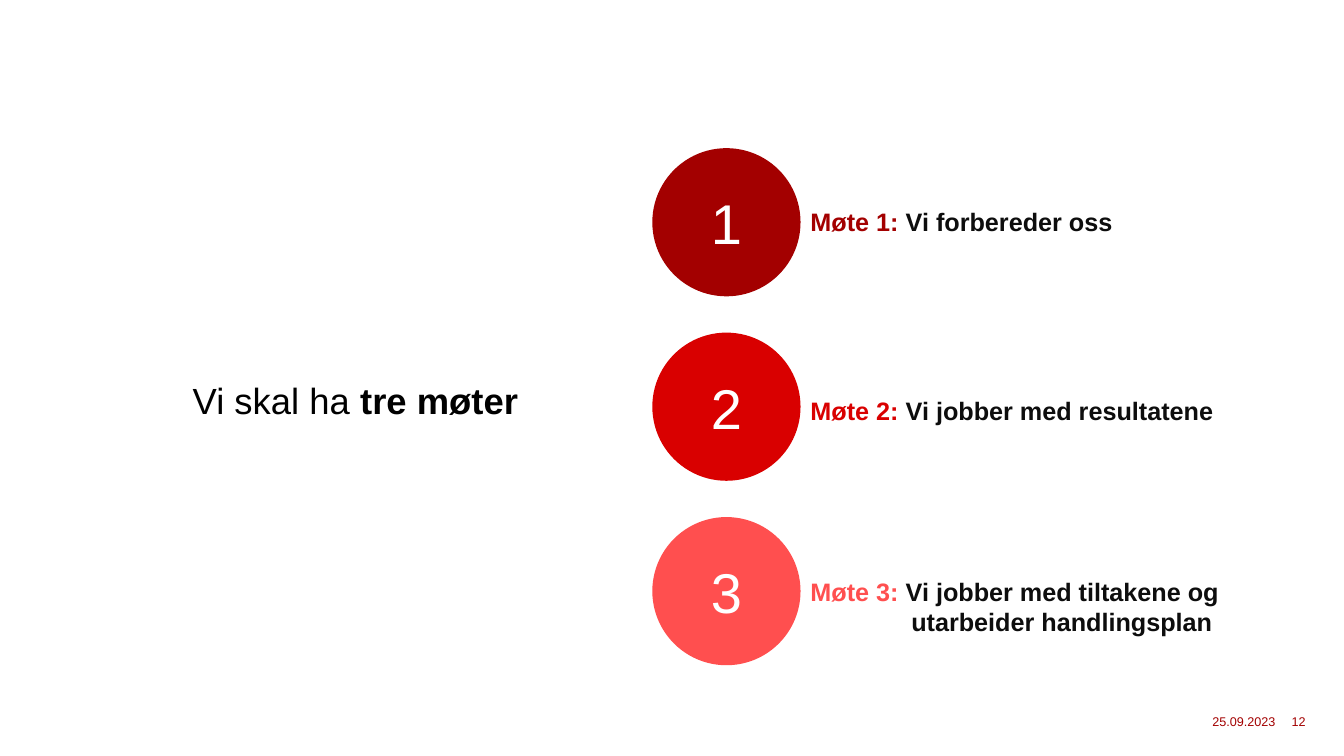
from pptx import Presentation, util as u
from pptx.dml.color import RGBColor
from pptx.enum import shapes, text

DARK, RED, PINK = "A30000", "D90000", "FF4F4F"
BLACK, INK, WHITE = "000000", "0D0D0D", "FFFFFF"

# Meeting grid: circles in one column, labels right beside them
LEFT, TOP, SIZE, STEP = 6.47, 1.47, 1.47, 1.83

# Number colour, label top, label width, label height, lines
MEETINGS = [
    (DARK, 2, 3.23, 0.4, ["Vi forbereder oss"]),
    (RED, 3.87, 4.24, 0.4, ["Vi jobber med resultatene"]),
    (PINK, 5.67, 5.24, 0.71,
     ["Vi jobber med tiltakene og", "utarbeider handlingsplan"]),
]


def color(code):
    return RGBColor.from_string(code)


def style(para, size, code=None, bold=None):
    font = para.font
    font.name, font.size, font.bold = "Arial", u.Pt(size), bold
    if code:
        font.color.rgb = color(code)


def add_run(para, words, code=None, bold=None):
    run = para.add_run()
    run.text = words
    run.font.bold = bold
    if code:
        run.font.color.rgb = color(code)


def add_box(slide, left, top, width, height, inset=True, wrap=True):
    box = slide.shapes.add_textbox(*map(u.Inches, (left, top, width, height)))
    frame = box.text_frame
    frame.word_wrap = wrap
    if not inset:
        frame.margin_left = frame.margin_right = 0
        frame.margin_top = frame.margin_bottom = 0
    return frame


def add_claim(slide):
    para = add_box(slide, 0.68, 3.75, 5.79, 2.88, inset=False).paragraphs[0]
    para.alignment = text.PP_ALIGN.CENTER
    para.space_after = u.Pt(3)
    style(para, 26, BLACK)
    add_run(para, "Vi skal ha ")
    add_run(para, "tre møter ", bold=True)


def add_circle(slide, number, top, code):
    disc = slide.shapes.add_shape(
        shapes.MSO_SHAPE.OVAL, *map(u.Inches, (LEFT, top, SIZE, SIZE)))
    disc.shadow.inherit = False
    disc.fill.solid()
    disc.fill.fore_color.rgb = color(code)
    disc.line.fill.background()
    frame = disc.text_frame
    frame.vertical_anchor = text.MSO_ANCHOR.MIDDLE
    para = frame.paragraphs[0]
    para.alignment = text.PP_ALIGN.CENTER
    para.text = str(number)
    style(para, 40, WHITE)


def add_label(slide, number, top, width, height, code, lines):
    frame = add_box(slide, LEFT + SIZE, top, width, height,
                    wrap=len(lines) > 1)
    frame.auto_size = text.MSO_AUTO_SIZE.SHAPE_TO_FIT_TEXT
    para = frame.paragraphs[0]
    style(para, 18, bold=True)
    add_run(para, f"Møte {number}: ", code, True)
    add_run(para, lines[0], INK, True)
    # Further lines sit indented below the first
    for line in lines[1:]:
        para = frame.add_paragraph()
        para.level = 2
        props = para._p.get_or_add_pPr()
        props.set("marL", str(u.Inches(1)))
        props.set("indent", "0")
        para.text = line
        style(para, 18, INK, True)


def add_footer(slide, words, left, width, align):
    frame = add_box(slide, left, 7.04, width, 0.23, inset=False)
    frame.vertical_anchor = text.MSO_ANCHOR.MIDDLE
    para = frame.paragraphs[0]
    para.alignment = align
    para.text = words
    style(para, 9, DARK)


def main():
    deck = Presentation()
    deck.slide_width, deck.slide_height = u.Inches(13.33), u.Inches(7.5)
    slide = deck.slides.add_slide(deck.slide_layouts[6])

    add_claim(slide)

    # Three meetings
    for row, (code, top, width, height, lines) in enumerate(MEETINGS):
        add_circle(slide, row + 1, TOP + row * STEP, code)
        add_label(slide, row + 1, top, width, height, code, lines)

    # Date and page number
    add_footer(slide, "25.09.2023", 11.47, 1.18, text.PP_ALIGN.RIGHT)
    add_footer(slide, "12", 12.81, 0.38, text.PP_ALIGN.LEFT)

    deck.save("out.pptx")


if __name__ == "__main__":
    main()
